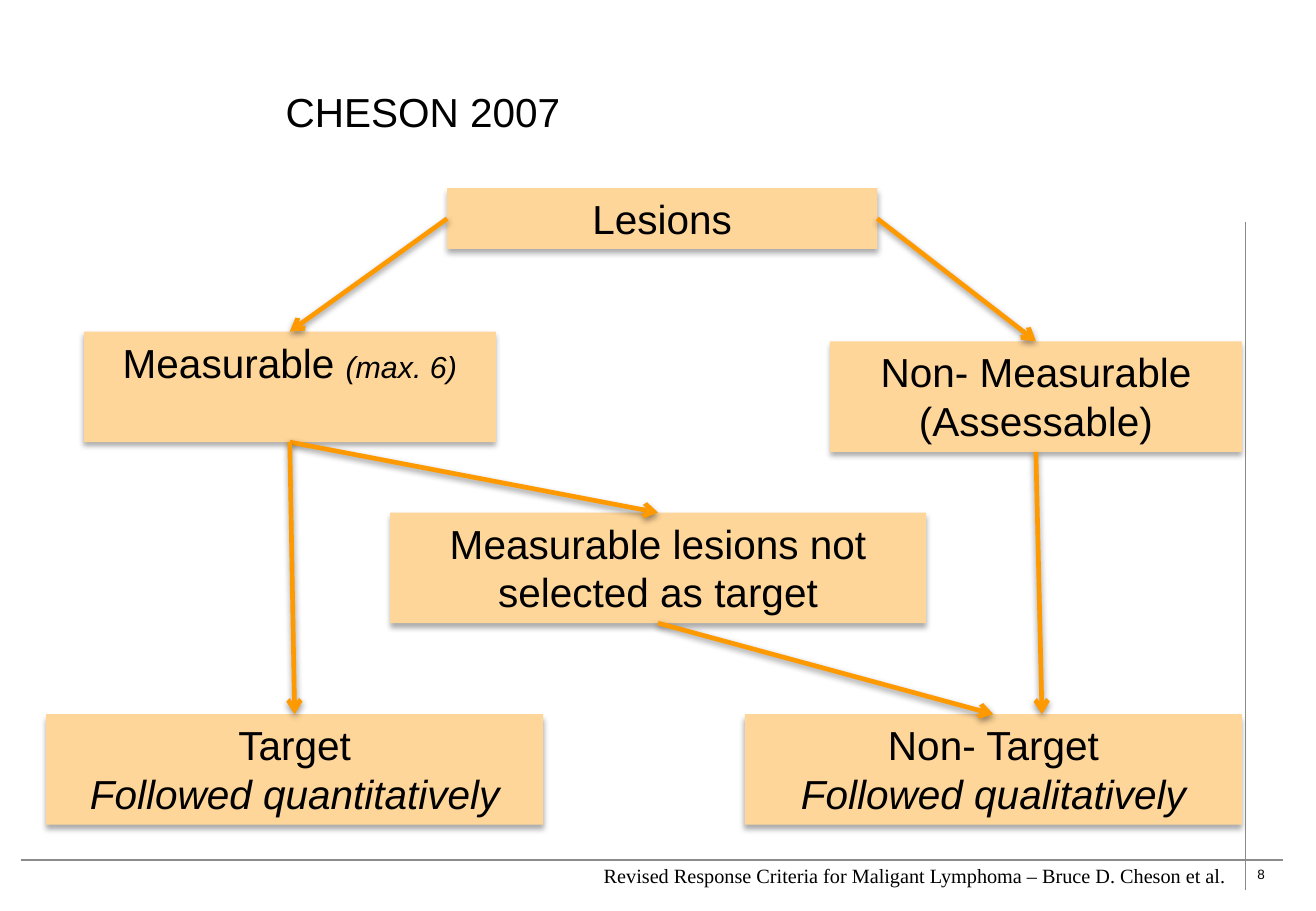
from dataclasses import dataclass
from typing import NamedTuple

from lxml.etree import SubElement
from pptx import Presentation
from pptx.dml.color import RGBColor
from pptx.enum.shapes import MSO_CONNECTOR, MSO_SHAPE
from pptx.enum.text import MSO_ANCHOR, PP_ALIGN
from pptx.oxml.ns import qn
from pptx.util import Inches, Pt


@dataclass(frozen=True)
class Theme:
    ink: str = "000000"
    box: str = "FFD699"
    arrow: str = "FF9900"
    rule: str = "8B8B8B"
    sans: str = "Arial"
    serif: str = "Times New Roman"
    large: float = 24
    small: float = 18
    foot: float = 12
    page: float = 8


class Shade(NamedTuple):
    alpha: int
    blur: float
    dist: float


class Run(NamedTuple):
    text: str
    size: float
    italic: bool = False


class Box(NamedTuple):
    left: float
    top: float
    width: float
    height: float
    lines: list[list[Run]]

    def site(self, side: int) -> tuple[float, float]:
        """Middle of a side: 0 top, 1 left, 2 bottom, 3 right."""
        across = (0.5, 0, 0.5, 1)[side]
        down = (0, 0.5, 1, 0.5)[side]
        return self.left + across * self.width, self.top + down * self.height


class Link(NamedTuple):
    start: str
    side: int
    end: str
    shift: float = 0


THEME = Theme()
TOP, LEFT, BOTTOM, RIGHT = range(4)


def big(text: str, italic: bool = False) -> list[Run]:
    return [Run(text, THEME.large, italic)]


BOXES = {
    "measured": Box(0.69, 2.73, 3.39, 0.91,
                    [big("Measurable ") + [Run("(max. 6)", THEME.small, True)]]),
    "assessed": Box(6.83, 2.81, 3.39, 0.91, [big("Non- Measurable (Assessable)")]),
    "lesions": Box(3.68, 1.55, 3.54, 0.5, [big("Lesions")]),
    "others": Box(3.21, 4.22, 4.41, 0.91,
                  [big("Measurable lesions not selected as target")]),
    "target": Box(0.38, 5.88, 4.09, 0.91,
                  [big("Target"), big("Followed quantitatively", True)]),
    "rest": Box(6.13, 5.88, 4.09, 0.91,
                [big("Non- Target"), big("Followed qualitatively", True)]),
}
LINKS = [
    Link("lesions", LEFT, "measured"),
    Link("lesions", RIGHT, "assessed"),
    Link("measured", BOTTOM, "others"),
    Link("others", BOTTOM, "rest"),
    Link("assessed", BOTTOM, "rest", 0.4),
    Link("measured", BOTTOM, "target"),
]


def write(frame, lines: list[list[Run]], *, font: str = THEME.sans,
          align=PP_ALIGN.LEFT, anchor=MSO_ANCHOR.TOP, wrap: bool = True) -> None:
    frame.word_wrap = wrap
    frame.vertical_anchor = anchor
    for index, line in enumerate(lines):
        para = frame.paragraphs[0] if index == 0 else frame.add_paragraph()
        para.alignment = align
        for part in line:
            run = para.add_run()
            run.text = part.text
            run.font.name = font
            run.font.size = Pt(part.size)
            run.font.italic = part.italic
            run.font.color.rgb = RGBColor.from_string(THEME.ink)


def label(slide, place: tuple, run: Run, **style) -> None:
    box = slide.shapes.add_textbox(*map(Inches, place))
    write(box.text_frame, [[run]], **style)


def cast(shape, shade: Shade | None) -> None:
    """Set the shadow; call once fill and line are in place."""
    effects = SubElement(shape.element.spPr, qn("a:effectLst"))
    if shade:
        outer = SubElement(effects, qn("a:outerShdw"), blurRad=str(Pt(shade.blur)),
                           dist=str(Pt(shade.dist)), dir="5400000", rotWithShape="0")
        color = SubElement(outer, qn("a:srgbClr"), val=THEME.ink)
        SubElement(color, qn("a:alpha"), val=str(shade.alpha * 1000))


def draw_line(slide, start: tuple, end: tuple, color: str, width: float,
              shade: Shade | None = None, head: bool = False):
    line = slide.shapes.add_connector(MSO_CONNECTOR.STRAIGHT,
                                      *map(Inches, start + end))
    line.line.color.rgb = RGBColor.from_string(color)
    line.line.width = Pt(width)
    if head:
        SubElement(line.element.spPr.find(qn("a:ln")), qn("a:tailEnd"), type="arrow")
    cast(line, shade)
    return line


def draw_box(slide, box: Box):
    shape = slide.shapes.add_shape(MSO_SHAPE.RECTANGLE, *map(Inches, box[:4]))
    shape.fill.solid()
    shape.fill.fore_color.rgb = RGBColor.from_string(THEME.box)
    shape.line.fill.background()
    cast(shape, Shade(32, 3.5, 2.2))
    write(shape.text_frame, box.lines, align=PP_ALIGN.CENTER)
    return shape


def draw_link(slide, link: Link, shapes: dict) -> None:
    x, y = BOXES[link.end].site(TOP)
    line = draw_line(slide, BOXES[link.start].site(link.side), (x + link.shift, y),
                     THEME.arrow, 2.75, Shade(42, 4, 1.6), head=True)
    line.begin_connect(shapes[link.start], link.side)
    if not link.shift:
        line.end_connect(shapes[link.end], TOP)


def main() -> None:
    deck = Presentation()
    deck.slide_width, deck.slide_height = Inches(10.83), Inches(7.5)
    slide = deck.slides.add_slide(deck.slide_layouts[5])

    # Page frame
    label(slide, (10.25, 7.08, 0.34, 0.23), Run("8", THEME.page), wrap=False)
    draw_line(slide, (0.17, 7.08), (10.56, 7.08), THEME.rule, 1)
    draw_line(slide, (10.25, 7.33), (10.25, 1.83), THEME.rule, 1)

    # Title
    title = slide.shapes.title
    title.left, title.top = Inches(2.25), Inches(0.42)
    title.width, title.height = Inches(7.83), Inches(1)
    write(title.text_frame, [big("CHESON 2007")], anchor=MSO_ANCHOR.MIDDLE)

    # Flow chart
    shapes = {name: draw_box(slide, box) for name, box in BOXES.items()}
    for link in LINKS:
        draw_link(slide, link, shapes)

    # Source line
    source = "Revised Response Criteria for Maligant Lymphoma – Bruce D. Cheson et al."
    label(slide, (4.87, 7.06, 5.35, 0.3), Run(source, THEME.foot), font=THEME.serif)

    deck.save("out.pptx")


if __name__ == "__main__":
    main()
